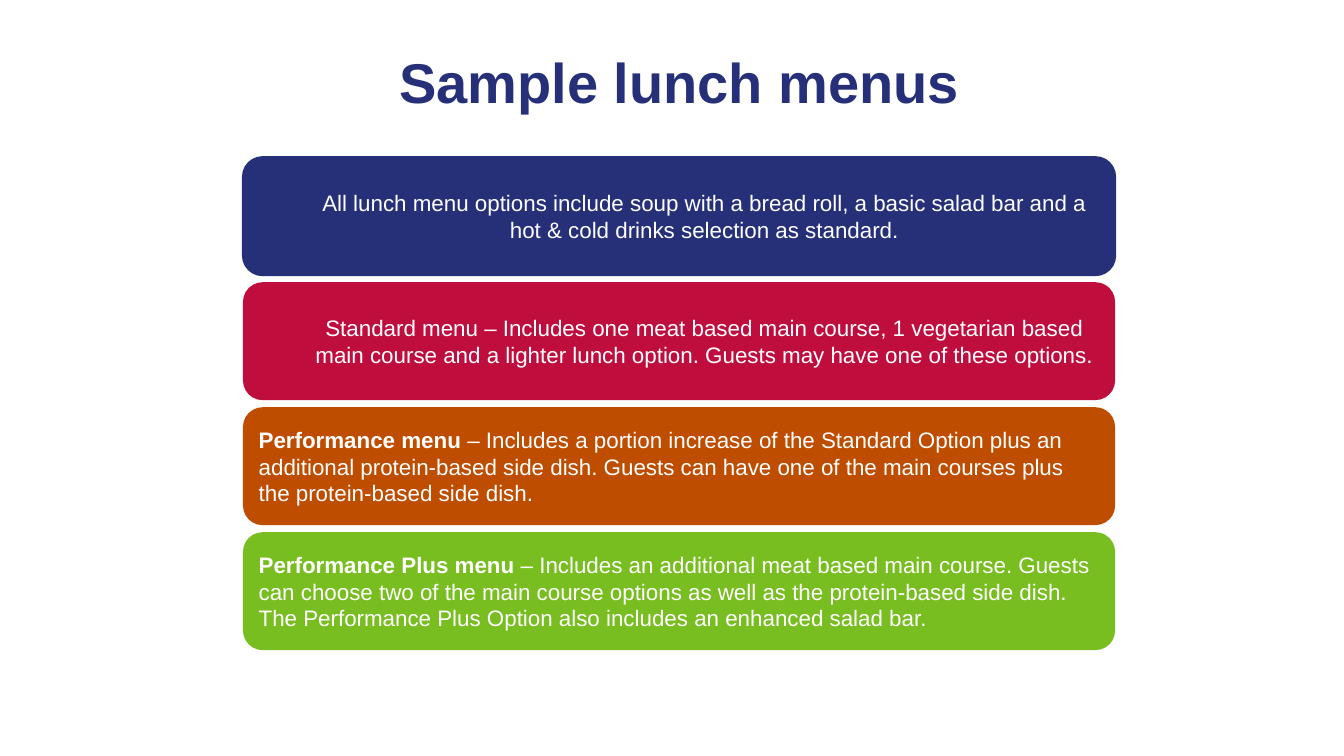
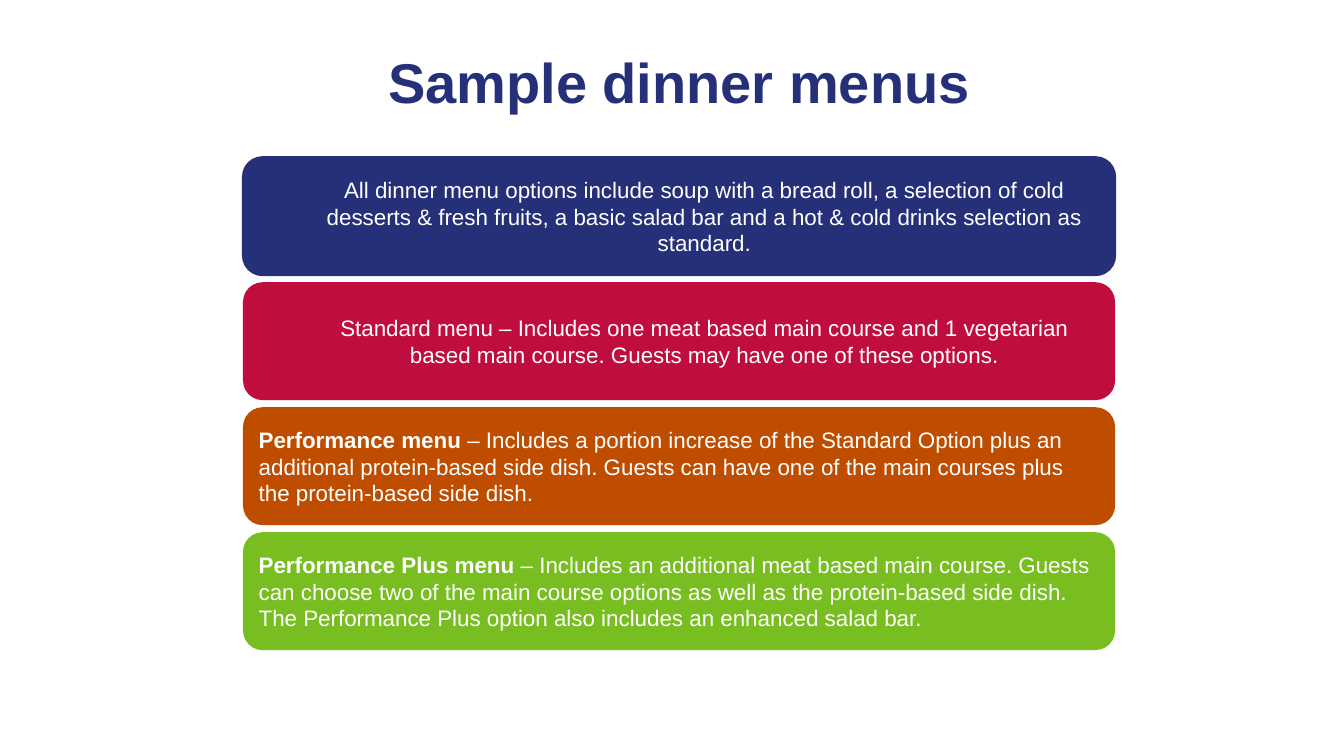
from pptx import Presentation
from pptx.dml.color import RGBColor
from pptx.enum.shapes import MSO_SHAPE
from pptx.enum.text import MSO_ANCHOR, MSO_AUTO_SIZE, PP_ALIGN
from pptx.util import Inches, Pt

COLOURS = {
    "navy": "263079",
    "crimson": "BF0D3E",
    "orange": "BE4D00",
    "green": "78BE20",
    "white": "FFFFFF",
}
FONT = "Arial"
PANEL_COLOURS = ["navy", "crimson", "orange", "green"]

PERFORMANCE = (
    "Performance menu ",
    "– Includes a portion increase of the Standard Option plus an additional protein-based "
    "side dish. Guests can have one of the main courses plus the protein-based side dish.",
)
PERFORMANCE_PLUS = (
    "Performance Plus menu ",
    "– Includes an additional meat based main course. Guests can choose two of the main course "
    "options as well as the protein-based side dish. The Performance Plus {} also includes "
    "an enhanced salad bar.",
)

# Each panel is a bold lead and its text; panels without a lead are centred.
MENUS = [
    {
        "title": "Sample lunch menus",
        "panels": [
            ("", "All lunch menu options include soup with a bread roll, a basic salad bar "
                 "and a hot & cold drinks selection as standard."),
            ("", "Standard menu – Includes one meat based main course, 1 vegetarian based main "
                 "course and a lighter lunch option. Guests may have one of these options."),
            PERFORMANCE,
            (PERFORMANCE_PLUS[0], PERFORMANCE_PLUS[1].format("Option")),
        ],
    },
    {
        "title": "Sample dinner menus",
        "panels": [
            ("", "All dinner menu options include soup with a bread roll, a selection of cold "
                 "desserts & fresh fruits, a basic salad bar and a hot & cold drinks selection "
                 "as standard."),
            ("", "Standard menu – Includes one meat based main course and 1 vegetarian based "
                 "main course. Guests may have one of these options."),
            PERFORMANCE,
            (PERFORMANCE_PLUS[0], PERFORMANCE_PLUS[1].format("option")),
        ],
    },
]

LEFT, WIDTH = Inches(2.41), Inches(8.65)
TITLE_TOP, TITLE_HEIGHT = Inches(0.42), Inches(0.77)
PANEL_TOP, PANEL_HEIGHT, PANEL_GAP = Inches(1.56), Inches(1.17), Inches(0.07)
CENTRED_INDENT = Inches(0.6)


def colour(name):
    return RGBColor.from_string(COLOURS[name])


def format_run(run, size, colour_name, bold):
    run.font.name = FONT
    run.font.size = Pt(size)
    run.font.bold = bold
    run.font.color.rgb = colour(colour_name)


def add_title(slide, text):
    title = slide.shapes.title
    title.left, title.top, title.width, title.height = LEFT, TITLE_TOP, WIDTH, TITLE_HEIGHT
    frame = title.text_frame
    frame.text = text
    frame.auto_size = MSO_AUTO_SIZE.NONE
    frame.vertical_anchor = MSO_ANCHOR.TOP
    paragraph = frame.paragraphs[0]
    paragraph.alignment = PP_ALIGN.CENTER
    format_run(paragraph.runs[0], 40, "navy", True)


def add_panel(slide, index, lead, text):
    top = PANEL_TOP + index * (PANEL_HEIGHT + PANEL_GAP)
    panel = slide.shapes.add_shape(
        MSO_SHAPE.ROUNDED_RECTANGLE, LEFT, top, WIDTH, PANEL_HEIGHT)
    panel.shadow.inherit = False
    panel.fill.solid()
    panel.fill.fore_color.rgb = colour(PANEL_COLOURS[index])
    if index == 0:
        panel.line.color.rgb = colour(PANEL_COLOURS[index])
        panel.line.width = Pt(1.5)
    else:
        panel.line.fill.background()

    frame = panel.text_frame
    frame.word_wrap = True
    frame.vertical_anchor = MSO_ANCHOR.MIDDLE
    paragraph = frame.paragraphs[0]
    if lead:
        paragraph.alignment = PP_ALIGN.LEFT
    else:
        paragraph.alignment = PP_ALIGN.CENTER
        frame.margin_left = CENTRED_INDENT
    for part, bold in ((lead, True), (text, False)):
        if part:
            run = paragraph.add_run()
            run.text = part
            format_run(run, 16, "white", bold)


def main():
    presentation = Presentation()
    presentation.slide_width = Inches(13.33)
    presentation.slide_height = Inches(7.5)
    title_only = presentation.slide_layouts.get_by_name("Title Only")
    for menu in MENUS:
        slide = presentation.slides.add_slide(title_only)
        add_title(slide, menu["title"])
        for index, (lead, text) in enumerate(menu["panels"]):
            add_panel(slide, index, lead, text)
    presentation.save("out.pptx")


if __name__ == "__main__":
    main()
